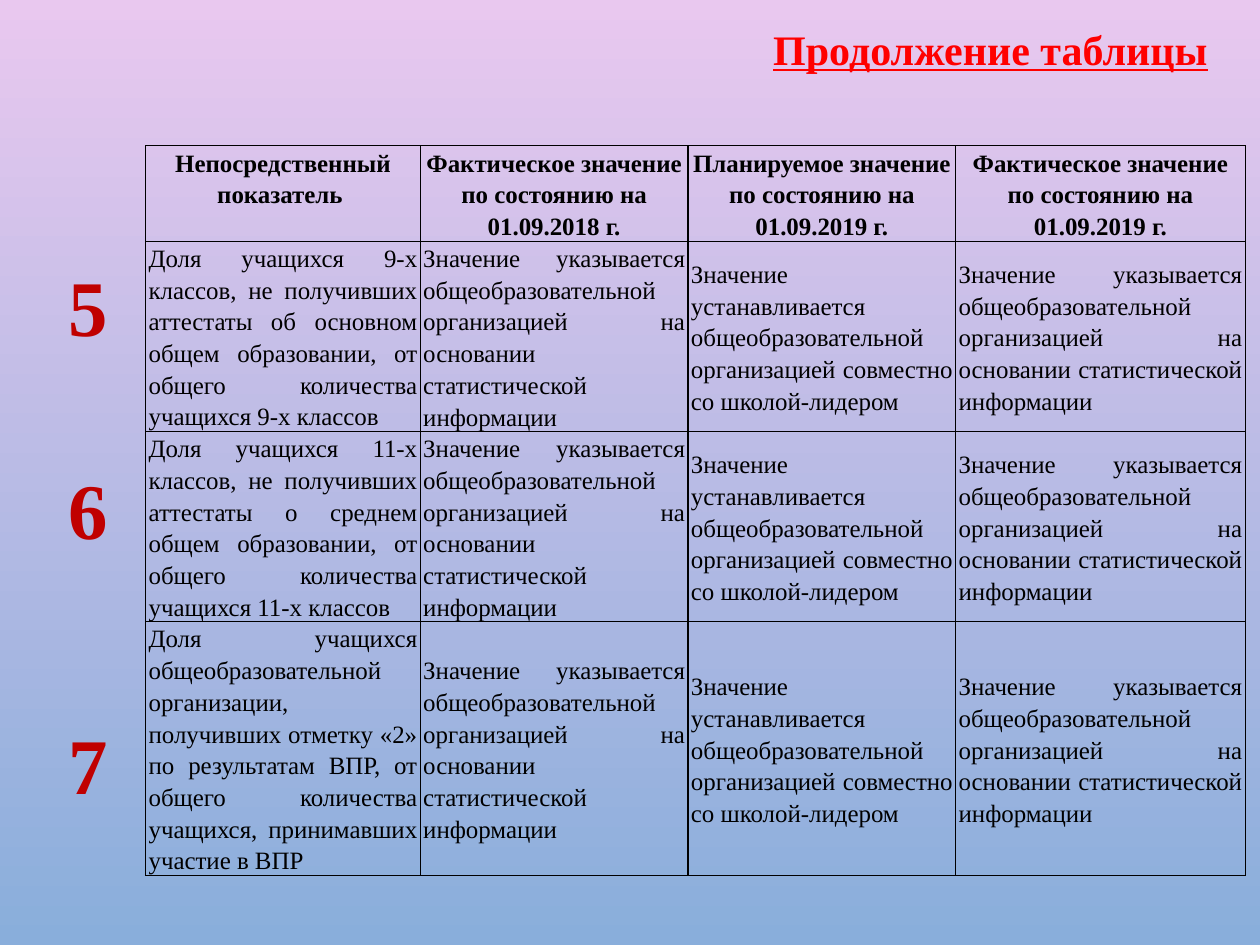
from dataclasses import dataclass

from pptx import Presentation
from pptx import util as u
from pptx.dml.color import RGBColor
from pptx.enum import text
from pptx.oxml import parse_xml
from pptx.oxml.ns import nsdecls

PX = 9525  # EMU in one px, 96 px to the inch


@dataclass(frozen=True)
class Theme:
    font: str = "Times New Roman"
    background_top: str = "E9C8EF"
    background_bottom: str = "89AEDB"
    ink: str = "000000"
    title: str = "FF0000"
    number: str = "C00000"
    title_size: int = 32
    number_size: int = 60
    table_size: int = 19


THEME = Theme()

HEADERS = [
    "Непосредственный показатель ",
    "Фактическое значение по состоянию на 01.09.2018 г.",
    "Планируемое значение по состоянию на 01.09.2019 г.",
    "Фактическое значение по состоянию на 01.09.2019 г.",
]
INDICATORS = [
    "Доля учащихся 9-х классов, не получивших аттестаты об основном общем "
    "образовании, от общего количества учащихся 9-х классов",
    "Доля учащихся 11-х классов, не получивших аттестаты о среднем общем "
    "образовании, от общего количества учащихся 11-х классов",
    "Доля учащихся общеобразовательной организации, получивших отметку «2» "
    "по результатам ВПР, от общего количества учащихся, принимавших участие в ВПР",
]
ACTUAL = ("Значение указывается общеобразовательной организацией "
          "на основании статистической информации")
PLANNED = ("Значение устанавливается общеобразовательной организацией "
           "совместно со школой-лидером")

TABLE_LEFT = TABLE_TOP = 148
COLUMN_WIDTHS = [279, 272, 272, 294]
ROW_HEIGHTS = [97, 193, 193, 258]
CELL_INSET = 3
NUMBER_TOPS = {"5": 257, "6": 463, "7": 722}


def px(length):
    return u.Emu(length * PX)


def write(frame, content, *, size, color, bold=False, underline=None,
          align=None, line_spacing=None):
    paragraph = frame.paragraphs[0]
    paragraph.alignment = align
    paragraph.line_spacing = line_spacing
    run = paragraph.add_run()
    run.text = content
    font = run.font
    font.name = THEME.font
    font.size = u.Pt(size)
    font.bold = bold
    font.underline = underline
    font.color.rgb = RGBColor.from_string(color)


def paint_background(slide):
    fill = slide.background.fill
    fill.gradient()
    fill.gradient_angle = 270
    colors = (THEME.background_top, THEME.background_bottom)
    for stop, color in zip(fill.gradient_stops, colors):
        stop.color.rgb = RGBColor.from_string(color)


def add_label(slide, content, left, top, width, height, **style):
    """Add a one-line text box that grows with its text."""
    box = slide.shapes.add_textbox(px(left), px(top), px(width), px(height))
    frame = box.text_frame
    frame.word_wrap = False
    frame.auto_size = text.MSO_AUTO_SIZE.SHAPE_TO_FIT_TEXT
    write(frame, content, bold=True, **style)


def add_borders(cell):
    properties = cell._tc.get_or_add_tcPr()
    for side in ("lnL", "lnR", "lnT", "lnB"):
        properties.append(parse_xml(
            f'<a:{side} {nsdecls("a")} w="{u.Pt(1)}"><a:solidFill>'
            f'<a:srgbClr val="{THEME.ink}"/></a:solidFill></a:{side}>'))


def fill_cell(cell, content, is_header, is_indicator):
    cell.margin_left = cell.margin_right = px(CELL_INSET)
    cell.margin_top = cell.margin_bottom = 0
    at_top = is_header or is_indicator
    cell.vertical_anchor = text.MSO_ANCHOR.TOP if at_top else text.MSO_ANCHOR.MIDDLE
    add_borders(cell)
    cell.fill.background()
    write(cell.text_frame, content, size=THEME.table_size, color=THEME.ink,
          bold=is_header, line_spacing=1.15,
          align=text.PP_ALIGN.CENTER if is_header else text.PP_ALIGN.JUSTIFY)


def add_indicator_table(slide):
    rows = [HEADERS] + [[indicator, ACTUAL, PLANNED, ACTUAL]
                        for indicator in INDICATORS]
    table = slide.shapes.add_table(
        len(rows), len(HEADERS), px(TABLE_LEFT), px(TABLE_TOP),
        px(sum(COLUMN_WIDTHS)), px(sum(ROW_HEIGHTS))).table
    table.first_row = table.horz_banding = False
    for column, width in zip(table.columns, COLUMN_WIDTHS):
        column.width = px(width)
    for row, height in zip(table.rows, ROW_HEIGHTS):
        row.height = px(height)
    for i, row in enumerate(rows):
        for j, content in enumerate(row):
            fill_cell(table.cell(i, j), content, i == 0, j == 0)


def main():
    presentation = Presentation()
    presentation.slide_width = px(1280)
    presentation.slide_height = px(960)
    slide = presentation.slides.add_slide(presentation.slide_layouts[6])
    paint_background(slide)
    add_indicator_table(slide)
    add_label(slide, "Продолжение таблицы", 776, 19, 466, 61,
              size=THEME.title_size, color=THEME.title, underline=True)
    for number, top in NUMBER_TOPS.items():
        add_label(slide, number, 60, top, 60, 107,
                  size=THEME.number_size, color=THEME.number)
    presentation.save("out.pptx")


if __name__ == "__main__":
    main()
